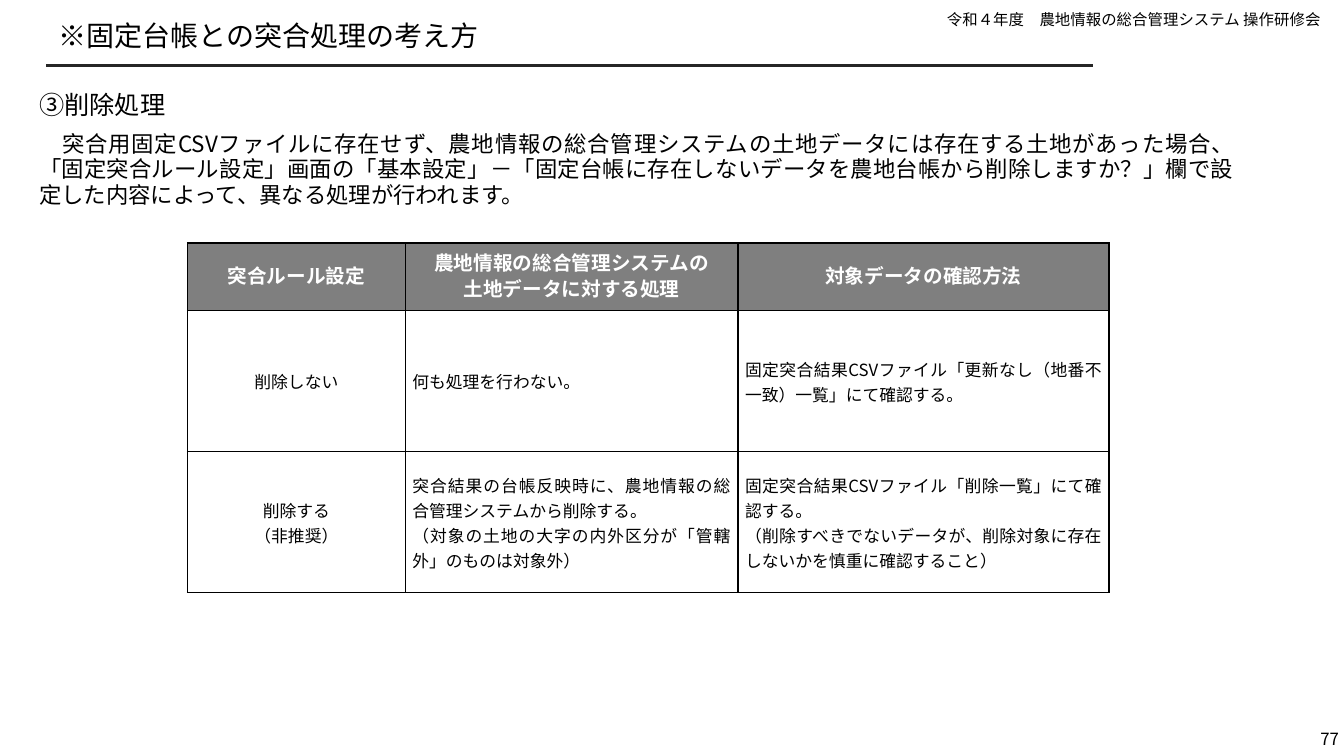
from dataclasses import dataclass

from lxml.etree import SubElement as Sub
from pptx import Presentation
from pptx.dml.color import RGBColor as Rgb
from pptx.enum.shapes import MSO_CONNECTOR as Conn
from pptx.enum.text import MSO_ANCHOR as Anchor, MSO_AUTO_SIZE as Auto, PP_ALIGN as Align
from pptx.oxml.ns import qn
from pptx.util import Inches, Pt


@dataclass(frozen=True)
class Theme:
    font: str = "Noto Sans CJK JP"
    ink: str = "000000"
    rule: str = "262626"
    head: str = "7F7F7F"
    white: str = "FFFFFF"
    title: int = 20
    topic: int = 18
    body: int = 16
    label: int = 14
    small: int = 12
    note: int = 11
    lead: int = 18


T = Theme()

COLS = (2.16, 3.3, 3.68)
ROWS = (0.67, 1.4, 1.4)
CELLS = (
    ("突合ルール設定",
     "農地情報の総合管理システムの\n土地データに対する処理",
     "対象データの確認方法"),
    ("削除しない",
     "何も処理を行わない。",
     "固定突合結果CSVファイル「更新なし（地番不一致）一覧」にて確認する。"),
    ("削除する\n（非推奨）",
     "突合結果の台帳反映時に、農地情報の総合管理システムから削除する。\n"
     "（対象の土地の大字の内外区分が「管轄外」のものは対象外）",
     "固定突合結果CSVファイル「削除一覧」にて確認する。\n"
     "（削除すべきでないデータが、削除対象に存在しないかを慎重に確認すること）"),
)


def write(frame, text, size=T.small, color=T.ink, bold=False, align=Align.LEFT, lead=None):
    """Fill a text frame, one paragraph per line of text."""
    for i, line in enumerate(text.split("\n")):
        para = frame.add_paragraph() if i else frame.paragraphs[0]
        para.alignment = align
        if lead:
            para.line_spacing = Pt(lead)
        run = para.add_run()
        run.text = line
        font = run.font
        font.size, font.bold, font.name = Pt(size), bold, T.font
        font.color.rgb = Rgb.from_string(color)
        # East Asian text needs its own typeface entry
        Sub(run._r.get_or_add_rPr(), qn("a:ea"), typeface=T.font)


def add_text(slide, box, text, inset=None, anchor=Anchor.TOP, **style):
    frame = slide.shapes.add_textbox(*map(Inches, box)).text_frame
    frame.word_wrap = True
    frame.vertical_anchor = anchor
    if inset is None:
        frame.auto_size = Auto.SHAPE_TO_FIT_TEXT
    else:
        frame.margin_left = Inches(inset)
        frame.margin_top = frame.margin_right = frame.margin_bottom = 0
    write(frame, text, **style)


def add_rule(slide, left, right, top):
    line = slide.shapes.add_connector(
        Conn.STRAIGHT, Inches(left), Inches(top), Inches(right), Inches(top))
    line.line.color.rgb = Rgb.from_string(T.rule)
    line.line.width = Pt(1.5)
    Sub(line._element.spPr, qn("a:effectLst"))


def frame_cell(cell):
    """Draw a thin border on all four sides."""
    props = cell._tc.get_or_add_tcPr()
    for side in ("lnL", "lnR", "lnT", "lnB"):
        edge = Sub(props, qn(f"a:{side}"), w=str(Pt(1)))
        Sub(Sub(edge, qn("a:solidFill")), qn("a:srgbClr"), val=T.ink)


def add_grid(slide, left, top):
    grid = slide.shapes.add_table(
        len(ROWS), len(COLS), Inches(left), Inches(top),
        Inches(sum(COLS)), Inches(sum(ROWS))).table
    grid.first_row = grid.horz_banding = False
    for col, width in zip(grid.columns, COLS):
        col.width = Inches(width)
    for r, texts in enumerate(CELLS):
        grid.rows[r].height = Inches(ROWS[r])
        for c, text in enumerate(texts):
            cell = grid.cell(r, c)
            cell.margin_left = cell.margin_right = Inches(0.07)
            cell.margin_top = cell.margin_bottom = 0
            cell.vertical_anchor = Anchor.MIDDLE
            frame_cell(cell)
            if r == 0:
                cell.fill.solid()
                cell.fill.fore_color.rgb = Rgb.from_string(T.head)
                style = dict(size=T.label, color=T.white, bold=True)
            else:
                cell.fill.background()
                style = {}
            align = Align.CENTER if r == 0 or c == 0 else Align.JUSTIFY
            write(cell.text_frame, text, align=align, lead=T.lead, **style)


def main():
    deck = Presentation()
    deck.slide_width, deck.slide_height = Inches(13.33), Inches(7.5)
    slide = deck.slides.add_slide(deck.slide_layouts[6])

    # Header, rule and page number
    add_text(slide, (0.13, 0.05, 13.07, 0.29),
             "令和４年度　農地情報の総合管理システム 操作研修会",
             size=T.note, align=Align.RIGHT)
    add_rule(slide, 0.46, 10.84, 0.65)
    add_text(slide, (12.73, 7.21, 0.55, 0.24), "77",
             inset=0, anchor=Anchor.MIDDLE, align=Align.RIGHT)

    # Title and explanation
    add_text(slide, (0.46, 0.05, 10.38, 0.6), "※固定台帳との突合処理の考え方",
             inset=0.12, anchor=Anchor.MIDDLE, size=T.title)
    add_text(slide, (0.29, 1.26, 12.06, 0.86),
             "　突合用固定CSVファイルに存在せず、農地情報の総合管理システムの土地データには"
             "存在する土地があった場合、「固定突合ルール設定」画面の「基本設定」－"
             "「固定台帳に存在しないデータを農地台帳から削除しますか？」欄で設定した内容によって、"
             "異なる処理が行われます。",
             size=T.body, align=Align.JUSTIFY, lead=T.lead)
    add_text(slide, (0.29, 0.84, 6.92, 0.4), "③削除処理", size=T.topic)

    # Table of rules
    add_grid(slide, 1.86, 2.41)

    deck.save("out.pptx")


if __name__ == "__main__":
    main()
